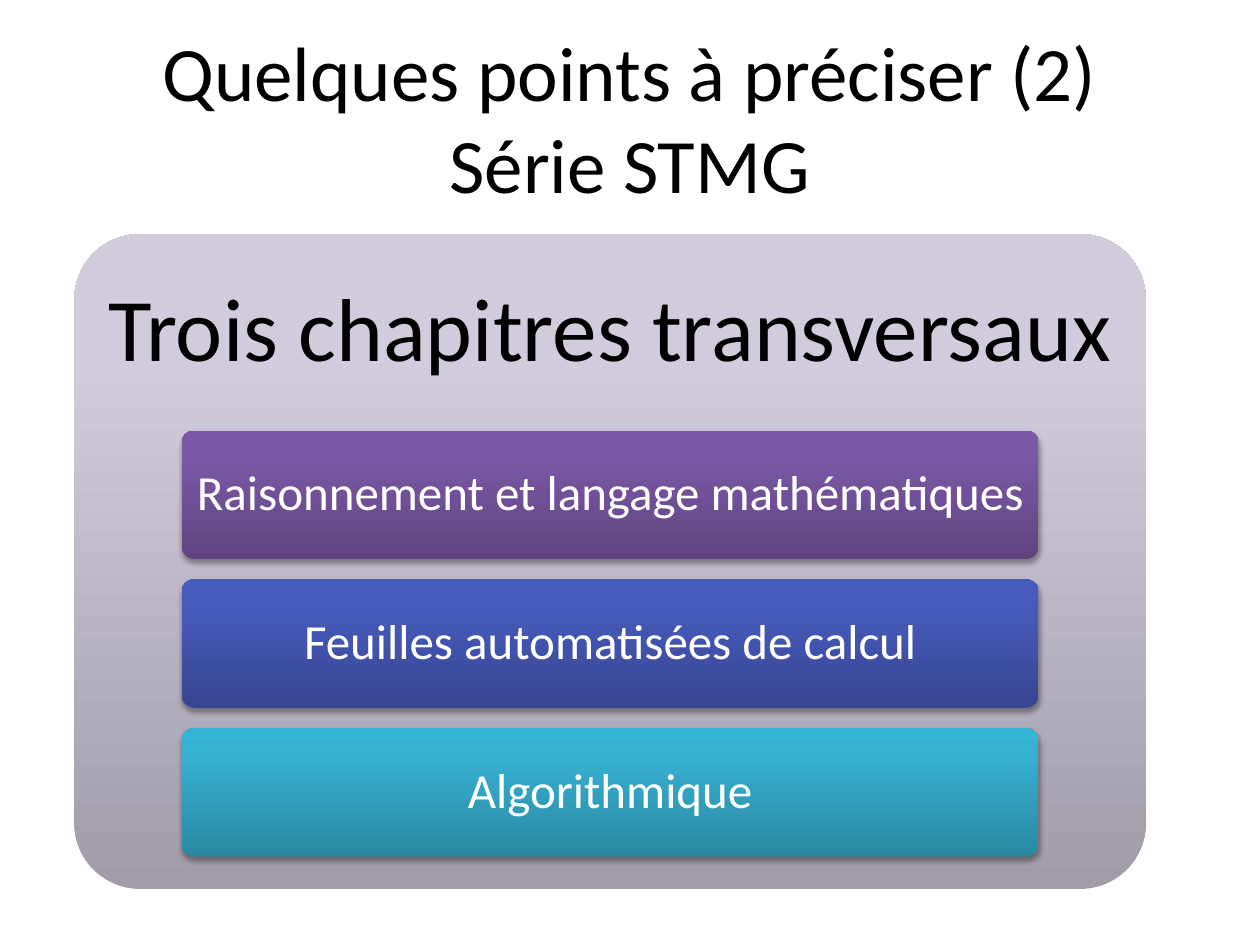
from copy import deepcopy

from lxml import etree
from pptx import Presentation
from pptx.dml.color import RGBColor
from pptx.enum.shapes import MSO_SHAPE
from pptx.enum.text import MSO_ANCHOR, PP_ALIGN
from pptx.oxml.ns import qn
from pptx.util import Cm, Pt

ROUNDED = MSO_SHAPE.ROUNDED_RECTANGLE
MIDDLE = MSO_ANCHOR.MIDDLE
CENTER = PP_ALIGN.CENTER

FONT = "Calibri"
BLACK = RGBColor(0x00, 0x00, 0x00)
WHITE = RGBColor(0xFF, 0xFF, 0xFF)
LILAC = [RGBColor(0xA1, 0x9C, 0xA8), RGBColor(0xD1, 0xCB, 0xDB), RGBColor(0xD2, 0xCB, 0xDC)]
PURPLE = [RGBColor(0x5F, 0x44, 0x80), RGBColor(0x7B, 0x58, 0xA6), RGBColor(0x7C, 0x57, 0xA8)]
BLUE = [RGBColor(0x37, 0x46, 0x91), RGBColor(0x47, 0x5B, 0xBC), RGBColor(0x45, 0x5A, 0xBF)]
TEAL = [RGBColor(0x2A, 0x88, 0xA2), RGBColor(0x37, 0xB1, 0xD2), RGBColor(0x34, 0xB4, 0xD6)]
STOP_POSITIONS = (0, 0.8, 1)

CHAPTERS = [
    ("Raisonnement et langage mathématiques", PURPLE),
    ("Feuilles automatisées de calcul", BLUE),
    ("Algorithmique", TEAL),
]
PANEL_LEFT, PANEL_TOP, PANEL_WIDTH, PANEL_HEIGHT = Cm(1.5), Cm(4.72), Cm(21.6), Cm(13.2)
HEADING_HEIGHT = Cm(3.96)
BAR_WIDTH, BAR_HEIGHT, BAR_STEP = Cm(17.28), Cm(2.59), Cm(3)
BAR_LEFT = PANEL_LEFT + (PANEL_WIDTH - BAR_WIDTH) // 2
BAR_TOP = PANEL_TOP + HEADING_HEIGHT


def add_gradient_box(left, top, width, height, colors):
    """Add a borderless rounded box whose gradient runs from bottom to top."""
    box = slide.shapes.add_shape(ROUNDED, left, top, width, height)
    box.adjustments[0] = 0.1
    box.shadow.inherit = False
    box.line.fill.background()
    box.fill.gradient()
    box.fill.gradient_angle = 90
    stop_list = box._element.spPr.find(".//" + qn("a:gsLst"))
    stop_list.append(deepcopy(stop_list[-1]))
    for stop, position, color in zip(box.fill.gradient_stops, STOP_POSITIONS, colors):
        stop.position = position
        stop.color.rgb = color
    return box


def write_text(holder, text, size, color, inset_x, inset_y, line_spacing):
    frame = holder.text_frame
    frame.text = text
    frame_format = {
        "word_wrap": True, "vertical_anchor": MIDDLE,
        "margin_left": inset_x, "margin_right": inset_x,
        "margin_top": inset_y, "margin_bottom": inset_y,
    }
    for attribute, value in frame_format.items():
        setattr(frame, attribute, value)
    paragraph = frame.paragraphs[0]
    paragraph.alignment = CENTER
    paragraph.line_spacing = line_spacing
    for run in paragraph.runs:
        run.font.name = FONT
        run.font.size = Pt(size)
        run.font.color.rgb = color


prs = Presentation()
prs.slide_width, prs.slide_height = Cm(25.4), Cm(19.05)
slide = prs.slides.add_slide(prs.slide_layouts[6])

title = slide.shapes.add_textbox(Cm(1.27), Cm(0.76), Cm(22.86), Cm(3.18))
write_text(title, "Quelques points à préciser (2)\vSérie STMG", 44, BLACK, Cm(0.25), Cm(0.13), 1.0)

add_gradient_box(PANEL_LEFT, PANEL_TOP, PANEL_WIDTH, PANEL_HEIGHT, LILAC)
heading = slide.shapes.add_textbox(PANEL_LEFT, PANEL_TOP, PANEL_WIDTH, HEADING_HEIGHT)
write_text(heading, "Trois chapitres transversaux", 51, BLACK, Cm(0.53), Cm(0.53), 0.9)

for index, (chapter, colors) in enumerate(CHAPTERS):
    bar = add_gradient_box(BAR_LEFT, BAR_TOP + index * BAR_STEP, BAR_WIDTH, BAR_HEIGHT, colors)
    write_text(bar, chapter, 28, WHITE, Cm(0.2), Cm(0.2), 0.9)
    effects = bar._element.spPr.find(qn("a:effectLst"))
    shadow = etree.SubElement(effects, qn("a:outerShdw"), blurRad=str(Pt(3.1)),
                              dist=str(Pt(1.8)), dir="5400000", rotWithShape="0")
    shadow_color = etree.SubElement(shadow, qn("a:srgbClr"), val=str(BLACK))
    etree.SubElement(shadow_color, qn("a:alpha"), val="35000")

prs.save("out.pptx")
